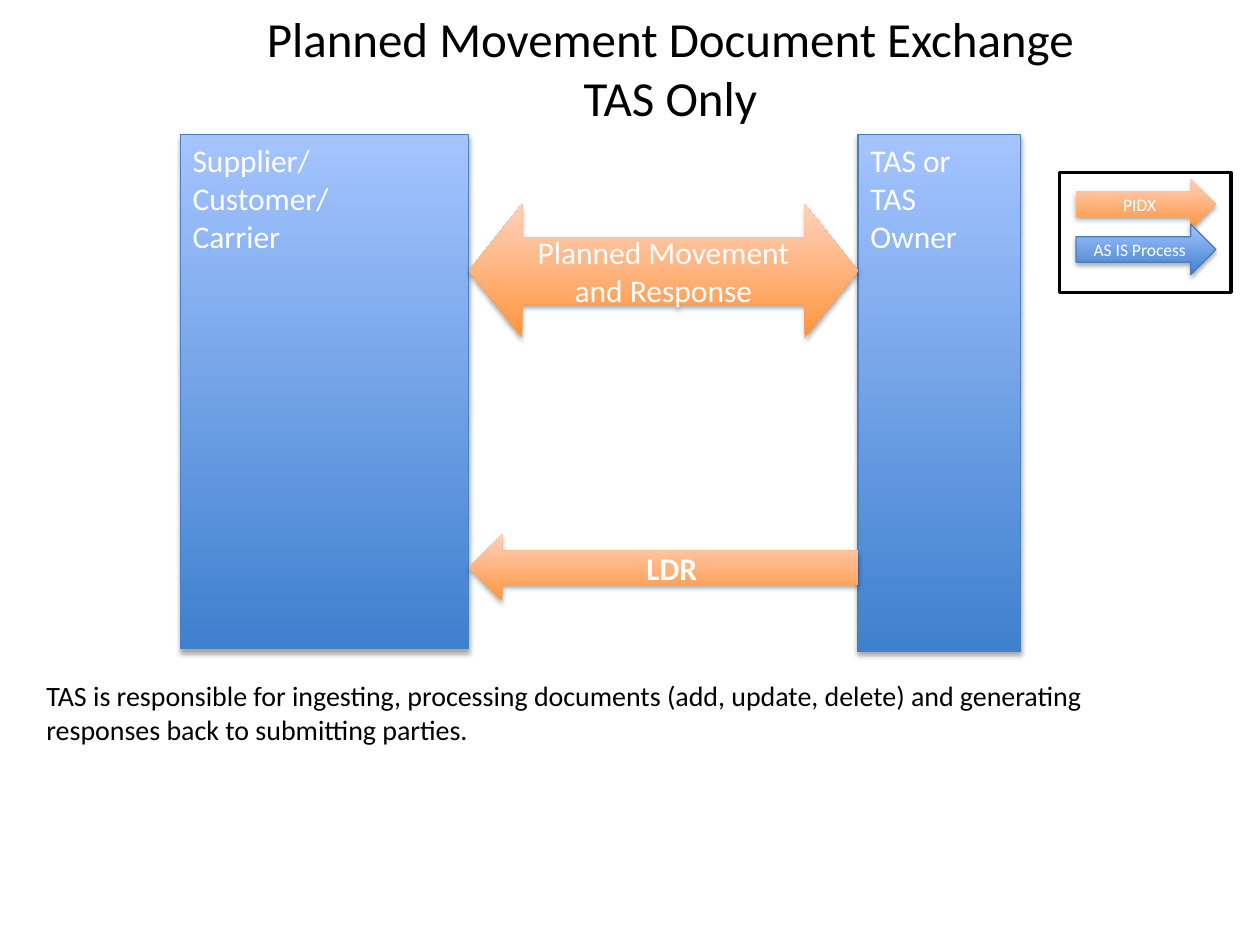
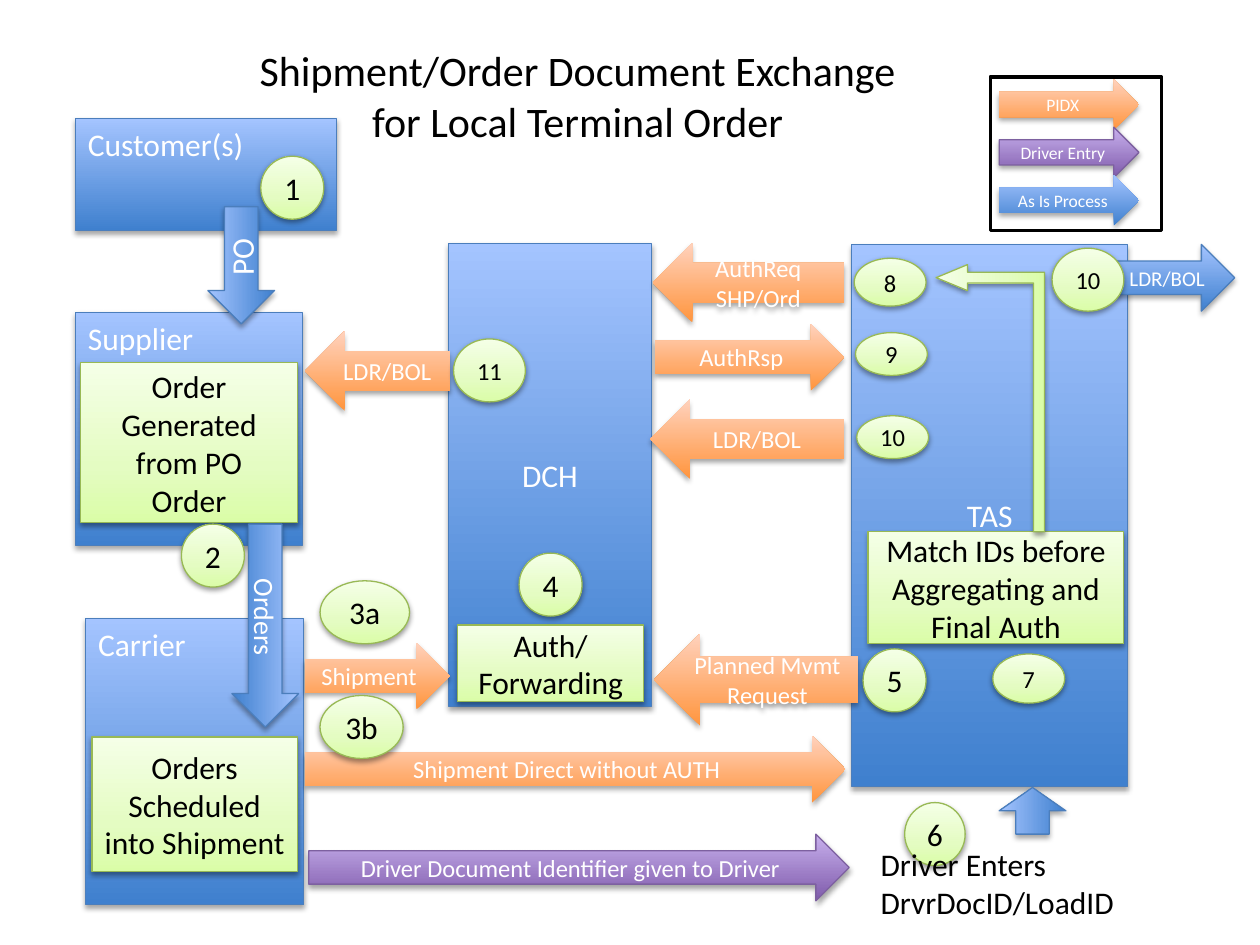
from dataclasses import dataclass, replace
from lxml import etree
from pptx import Presentation
from pptx.dml.color import RGBColor
from pptx.enum.shapes import MSO_SHAPE
from pptx.enum.text import MSO_ANCHOR, PP_ALIGN
from pptx.oxml import parse_xml
from pptx.oxml.ns import nsdecls
from pptx.util import Inches, Pt

RECT = MSO_SHAPE.RECTANGLE
LEFT = MSO_SHAPE.LEFT_ARROW
RIGHT = MSO_SHAPE.RIGHT_ARROW
BOTH = MSO_SHAPE.LEFT_RIGHT_ARROW
BENT = MSO_SHAPE.BENT_UP_ARROW
BADGE = MSO_SHAPE.FLOWCHART_CONNECTOR
TOP, MIDDLE = MSO_ANCHOR.TOP, MSO_ANCHOR.MIDDLE
START, CENTER = PP_ALIGN.LEFT, PP_ALIGN.CENTER

WIDTH, HEIGHT = Inches(10), Inches(7.5)
COLUMNS, ROWS = 100, 75


@dataclass(frozen=True)
class Skin:
    stops: tuple
    line: str | None
    ink: str = "FFFFFF"
    shadow_alpha: int = 35
    shadow_distance: float = 1.8


@dataclass(frozen=True)
class Theme:
    font: str = "Calibri"
    ink: str = "000000"
    paper: str = "FFFFFF"
    hairline: float = 0.75
    frame_line: float = 2
    title: int = 28
    subtitle: int = 24
    body: int = 18
    note: int = 16
    label: int = 14
    small: int = 12
    legend: int = 10
    blue: Skin = Skin(((0, "3F80CE"), (100, "A4C4FF")), "4B7EBC")
    orange: Skin = Skin(((0, "FF953E"), (100, "FFD2BD")), None)
    purple: Skin = Skin(((0, "7F5BAB"), (100, "C8B0ED")), "7D60A0")
    green: Skin = Skin(((0, "DAFDA7"), (35, "E4FCC2"), (100, "F5FFE7")),
                       "98B955", "000000", 38, 1.6)


THEME = Theme()


def place(at):
    left, top, width, height = at
    return (round(left * WIDTH / COLUMNS), round(top * HEIGHT / ROWS),
            round(width * WIDTH / COLUMNS), round(height * HEIGHT / ROWS))


def write(shape, text, size, color, align=CENTER, anchor=MIDDLE, bold=False, wrap=True):
    frame = shape.text_frame
    frame.word_wrap = wrap
    frame.vertical_anchor = anchor
    for index, line in enumerate(text.split("\n")):
        para = frame.add_paragraph() if index else frame.paragraphs[0]
        para.alignment = align
        span = para.add_run()
        span.text = line
        span.font.name = THEME.font
        span.font.size = Pt(size)
        span.font.bold = bold
        span.font.color.rgb = RGBColor.from_string(color)


def outline(shape, color, points):
    if color:
        shape.line.color.rgb = RGBColor.from_string(color)
        shape.line.width = Pt(points)
    else:
        shape.line.fill.background()


def dress(shape, skin):
    shape.shadow.inherit = False
    outline(shape, skin.line, THEME.hairline)
    stops = "".join(f'<a:gs pos="{share * 1000}"><a:srgbClr val="{color}"/></a:gs>'
                    for share, color in skin.stops)
    gradient = parse_xml(
        f'<a:gradFill {nsdecls("a")} rotWithShape="1"><a:gsLst>{stops}</a:gsLst>'
        '<a:lin ang="16200000" scaled="0"/></a:gradFill>')
    properties = shape._element.spPr
    properties.find("{*}prstGeom").addnext(gradient)
    effects = properties.find("{*}effectLst")
    shadow = etree.SubElement(
        effects, "{%s}outerShdw" % etree.QName(effects).namespace,
        blurRad=str(Pt(3.1)), dist=str(Pt(skin.shadow_distance)),
        dir="5400000", rotWithShape="0")
    shadow.append(parse_xml(
        f'<a:srgbClr {nsdecls("a")} val="{THEME.ink}">'
        f'<a:alpha val="{skin.shadow_alpha * 1000}"/></a:srgbClr>'))


def block(page, kind, at, skin, text="", size=THEME.body, turn=0, bends=(), **style):
    shape = page.shapes.add_shape(kind, *place(at))
    for index, bend in enumerate(bends):
        shape.adjustments[index] = bend
    shape.rotation = turn
    dress(shape, skin)
    if text:
        write(shape, text, size, skin.ink, **style)


def party(page, at, name):
    block(page, RECT, at, THEME.blue, name, align=START, anchor=TOP)


def system(page, at, name):
    block(page, RECT, at, THEME.blue, name)


def task(page, at, text):
    block(page, RECT, at, THEME.green, text)


def badge(page, at, text, size=THEME.body):
    block(page, BADGE, at, THEME.green, text, size, wrap=False)


def words(page, at, text, size, **style):
    box = page.shapes.add_textbox(*place(at))
    write(box, text, size, THEME.ink, **style)


def legend(page, frame, first, pitch, entries):
    box = page.shapes.add_shape(RECT, *place(frame))
    box.shadow.inherit = False
    box.fill.solid()
    box.fill.fore_color.rgb = RGBColor.from_string(THEME.paper)
    outline(box, THEME.ink, THEME.frame_line)
    left, top = first
    for index, (skin, text) in enumerate(entries):
        block(page, RIGHT, (left, top + index * pitch, 11.1, 4), skin, text, THEME.legend)


def planned_movement(page):
    words(page, (19.2, 1, 68, 8.7), "Planned Movement Document Exchange TAS Only",
          THEME.title)
    party(page, (14.3, 10.7, 22.9, 40.8), "Supplier/\nCustomer/\nCarrier")
    party(page, (68.1, 10.7, 12.9, 41), "TAS or\nTAS Owner")
    block(page, LEFT, (37.2, 42.4, 30.9, 5.3), THEME.orange, "LDR", bold=True)
    block(page, BOTH, (37.2, 16.2, 30.9, 10.6), THEME.orange,
          "Planned Movement\nand Response", bends=(0.5, 0.4))
    words(page, (2.7, 53.4, 91.5, 6.4),
          "TAS is responsible for ingesting, processing documents (add, update, delete) "
          "and generating responses back to submitting parties.",
          THEME.note, align=START, anchor=TOP)
    legend(page, (84.1, 13.7, 13.6, 9.5), (85.4, 14.2), 3.6,
           [(THEME.orange, "PIDX"), (THEME.blue, "AS IS Process")])


def shipment_order(page):
    system(page, (67.6, 19.4, 21.9, 43), "TAS")
    words(page, (17.5, 1.3, 56.7, 12.5),
          "Shipment/Order Document Exchange for Local Terminal Order", THEME.subtitle)
    for at, name in [
        ((6, 24.8, 18, 18.5), "Supplier"),
        ((6, 9.4, 20.7, 8.9), "Customer(s)"),
        ((6.8, 49.1, 17.3, 22.7), "Carrier"),
    ]:
        party(page, at, name)
    system(page, (35.6, 19.3, 16.1, 36.8), "DCH")

    for at, text in [
        ((6.4, 28.8, 17.2, 12.7), "Order Generated from PO\nOrder"),
        ((7.3, 58.5, 16.3, 10.7), "Orders Scheduled into Shipment"),
        ((36.3, 49.6, 14.8, 6.1), "Auth/ Forwarding"),
        ((68.9, 42.2, 20.3, 8.9), "Match IDs before Aggregating and Final Auth"),
    ]:
        task(page, at, text)

    block(page, RIGHT, (13, 47, 16.1, 5.3), THEME.blue, "Orders", THEME.note, turn=90)
    block(page, LEFT, (14.5, 18.4, 9.3, 5.3), THEME.blue, "PO", turn=270)
    block(page, RIGHT, (80.1, 61.7, 3.7, 5.3), THEME.blue, turn=270)
    block(page, RIGHT, (88.6, 19.4, 9.4, 5.3), THEME.blue, "LDR/BOL", THEME.small)
    block(page, BENT, (68, 27.3, 21.2, 8.6), THEME.green, turn=270,
          bends=(0.1, 0.12, 0.29))
    for kind, at, skin, text in [
        (RIGHT, (52, 25.7, 15, 5.3), THEME.orange, "AuthRsp"),
        (LEFT, (51.8, 19.3, 15.2, 6.3), THEME.orange, "AuthReq\nSHP/Ord"),
        (LEFT, (51.6, 31.7, 15.4, 6.3), THEME.orange, "LDR/BOL"),
        (LEFT, (24.2, 26.3, 11.5, 6.3), THEME.orange, "LDR/BOL"),
        (RIGHT, (24.2, 58.4, 42.9, 5.3), THEME.orange, "Shipment Direct without AUTH"),
        (RIGHT, (24.2, 51, 11.5, 5.3), THEME.orange, "Shipment"),
        (LEFT, (51.9, 50.3, 16.2, 7.3), THEME.orange, "Planned Mvmt\nRequest"),
        (RIGHT, (24.5, 66.2, 42.9, 5.3), THEME.purple,
         "Driver Document Identifier given to Driver"),
    ]:
        block(page, kind, at, skin, text, THEME.label)

    for left, top, width, text in [
        (20.7, 12.4, 5, "1"), (14.4, 41.6, 5, "2"), (25.4, 46.1, 7.1, "3a"),
        (25.4, 55.2, 6.6, "3b"), (41.2, 43.9, 5, "4"), (68.5, 51.5, 5, "5"),
        (71.8, 63.7, 4.8, "6"),
    ]:
        badge(page, (left, top, width, 5), text)
    for left, top, height, text in [
        (78.8, 51.9, 3.9, "7"), (67.8, 20.5, 3.8, "8"), (67.9, 26.4, 3.4, "9"),
        (68, 33, 3.4, "10"), (83.5, 19.7, 5, "10"), (36, 26.9, 5, "11"),
    ]:
        badge(page, (left, top, 5.7, height), text, THEME.label)

    words(page, (68.9, 66.6, 20.8, 7.1), "Driver Enters\nDrvrDocID/LoadID", THEME.body,
          align=START, anchor=TOP, wrap=False)
    legend(page, (78.6, 6.1, 13.6, 12.2), (79.3, 6.3), 3.8,
           [(THEME.orange, "PIDX"), (THEME.purple, "Driver Entry"),
            (replace(THEME.blue, line=None), "As Is Process")])


def main():
    deck = Presentation()
    deck.slide_width, deck.slide_height = WIDTH, HEIGHT
    blank = deck.slide_layouts[6]
    for draw in (planned_movement, shipment_order):
        draw(deck.slides.add_slide(blank))
    deck.save("out.pptx")


if __name__ == "__main__":
    main()
